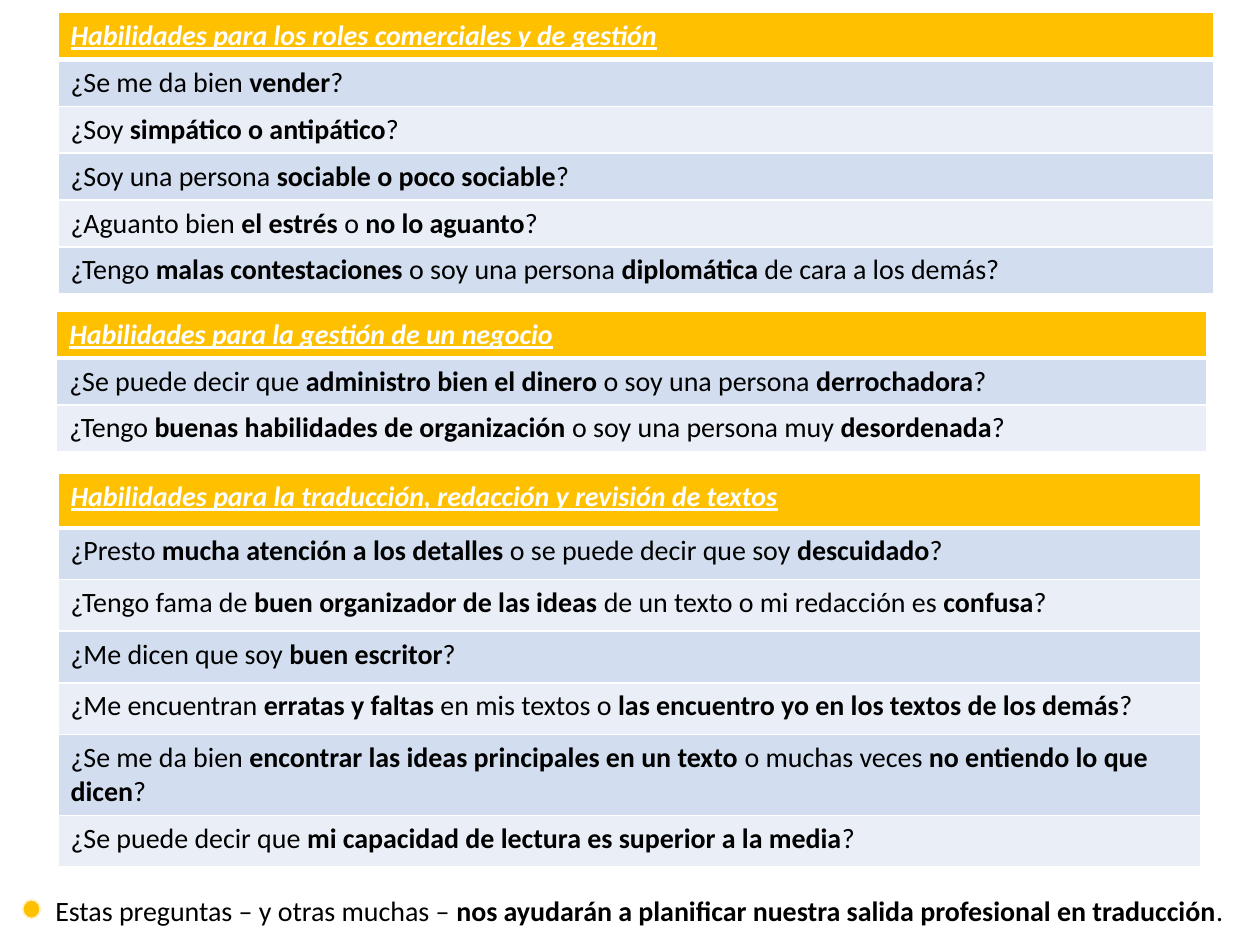
"""Build a slide of self-assessment questions grouped in three skill tables."""
from lxml import etree
from pptx import Presentation
from pptx.dml.color import RGBColor
from pptx.enum.shapes import MSO_SHAPE
from pptx.enum.text import MSO_AUTO_SIZE
from pptx.oxml.ns import qn
from pptx.util import Inches, Pt

GOLD = RGBColor(0xFF, 0xC0, 0x00)
CREAM = RGBColor(0xFF, 0xF2, 0xCC)
WHITE = RGBColor(0xFF, 0xFF, 0xFF)
BLACK = RGBColor(0x00, 0x00, 0x00)
BANDS = (RGBColor(0xD2, 0xDE, 0xEF), RGBColor(0xEA, 0xEF, 0xF7))

SKILLS = [
    {
        "title": "Habilidades para los roles comerciales y de gestión",
        "box": (0.46, 0.1, 9.17),
        "heights": [2.2 / 6] * 6,
        "questions": [
            "¿Se me da bien *vender*?",
            "¿Soy *simpático o antipático*?",
            "¿Soy una persona *sociable o poco sociable*?",
            "¿Aguanto bien *el estrés* o *no lo aguanto*?",
            "¿Tengo *malas contestaciones* o soy una persona *diplomática* de cara a los demás?",
        ],
    },
    {
        "title": "Habilidades para la gestión de un negocio",
        "box": (0.45, 2.47, 9.13),
        "heights": [1.1 / 3] * 3,
        "questions": [
            "¿Se puede decir que *administro bien el dinero* o soy una persona *derrochadora*?",
            "¿Tengo *buenas habilidades de organización* o soy una persona muy *desordenada*?",
        ],
    },
    {
        "title": "Habilidades para la traducción, redacción y revisión de textos",
        "box": (0.46, 3.76, 9.07),
        "heights": [0.43] + [0.41] * 4 + [0.62, 0.41],
        "questions": [
            "¿Presto *mucha atención a los detalles* o se puede decir que soy *descuidado*?",
            "¿Tengo fama de *buen organizador de las ideas* de un texto o mi redacción es *confusa*?",
            "¿Me dicen que soy *buen escritor*?",
            "¿Me encuentran *erratas y faltas* en mis textos o "
            "*las encuentro yo en los textos de los demás*?",
            "¿Se me da bien *encontrar las ideas principales en un texto* o muchas veces "
            "*no entiendo lo que dicen*?",
            "¿Se puede decir que *mi capacidad de lectura es superior a la media*?",
        ],
    },
]
CONCLUSION = (
    "Estas preguntas – y otras muchas – "
    "*nos ayudarán a planificar nuestra salida profesional en traducción*."
)
CONCLUSION_BOX = (0.34, 7.02, 9.72, 0.39)
BULLET_BOX = (0.18, 7.14, 0.14, 0.15)

BODY = {"name": "Calibri", "size": Pt(16), "italic": False, "underline": False}
HEADING = {**BODY, "bold": True, "italic": True, "underline": True}


def inches(values):
    return [Inches(value) for value in values]


def add_run(paragraph, words, color, formats):
    run = paragraph.add_run()
    run.text = words
    for attribute, value in formats.items():
        setattr(run.font, attribute, value)
    run.font.color.rgb = color


def write_marked(paragraph, sentence):
    for index, words in enumerate(sentence.split("*")):
        if words:
            add_run(paragraph, words, BLACK, {**BODY, "bold": index % 2 == 1})


def set_borders(cell, widths):
    properties = cell._tc.get_or_add_tcPr()
    for position, (side, width) in enumerate(widths.items()):
        line = etree.Element(qn(f"a:ln{side}"), w=str(Pt(width)))
        fill = etree.SubElement(line, qn("a:solidFill"))
        etree.SubElement(fill, qn("a:srgbClr"), val=str(WHITE))
        properties.insert(position, line)


def add_skill_table(slide, skill):
    left, top, width = skill["box"]
    heights = skill["heights"]
    frame = slide.shapes.add_table(
        len(heights), 1, *inches((left, top, width, sum(heights)))
    )
    table = frame.table
    for row, height in zip(table.rows, heights):
        row.height = Inches(height)
    for index, sentence in enumerate([skill["title"], *skill["questions"]]):
        cell = table.cell(index, 0)
        paragraph = cell.text_frame.paragraphs[0]
        if index == 0:
            add_run(paragraph, sentence, WHITE, HEADING)
        else:
            write_marked(paragraph, sentence)
        cell.fill.solid()
        cell.fill.fore_color.rgb = BANDS[(index - 1) % 2] if index else GOLD
        set_borders(cell, {
            "L": 1, "R": 1,
            "T": 3 if index == 1 else 1,
            "B": 3 if index == 0 else 1,
        })


def add_conclusion(slide):
    frame = slide.shapes.add_textbox(*inches(CONCLUSION_BOX)).text_frame
    frame.word_wrap = True
    frame.auto_size = MSO_AUTO_SIZE.SHAPE_TO_FIT_TEXT
    paragraph = frame.paragraphs[0]
    paragraph.line_spacing = 1.07
    paragraph.space_after = Pt(8)
    write_marked(paragraph, CONCLUSION)

    bullet = slide.shapes.add_shape(MSO_SHAPE.OVAL, *inches(BULLET_BOX))
    bullet.shadow.inherit = False
    bullet.fill.solid()
    bullet.fill.fore_color.rgb = GOLD
    bullet.line.color.rgb = CREAM
    bullet.line.width = Pt(1)


def main():
    presentation = Presentation()
    presentation.slide_width, presentation.slide_height = inches((10, 7.5))
    slide = presentation.slides.add_slide(presentation.slide_layouts[6])
    for skill in SKILLS:
        add_skill_table(slide, skill)
    add_conclusion(slide)
    presentation.save("out.pptx")


if __name__ == "__main__":
    main()
